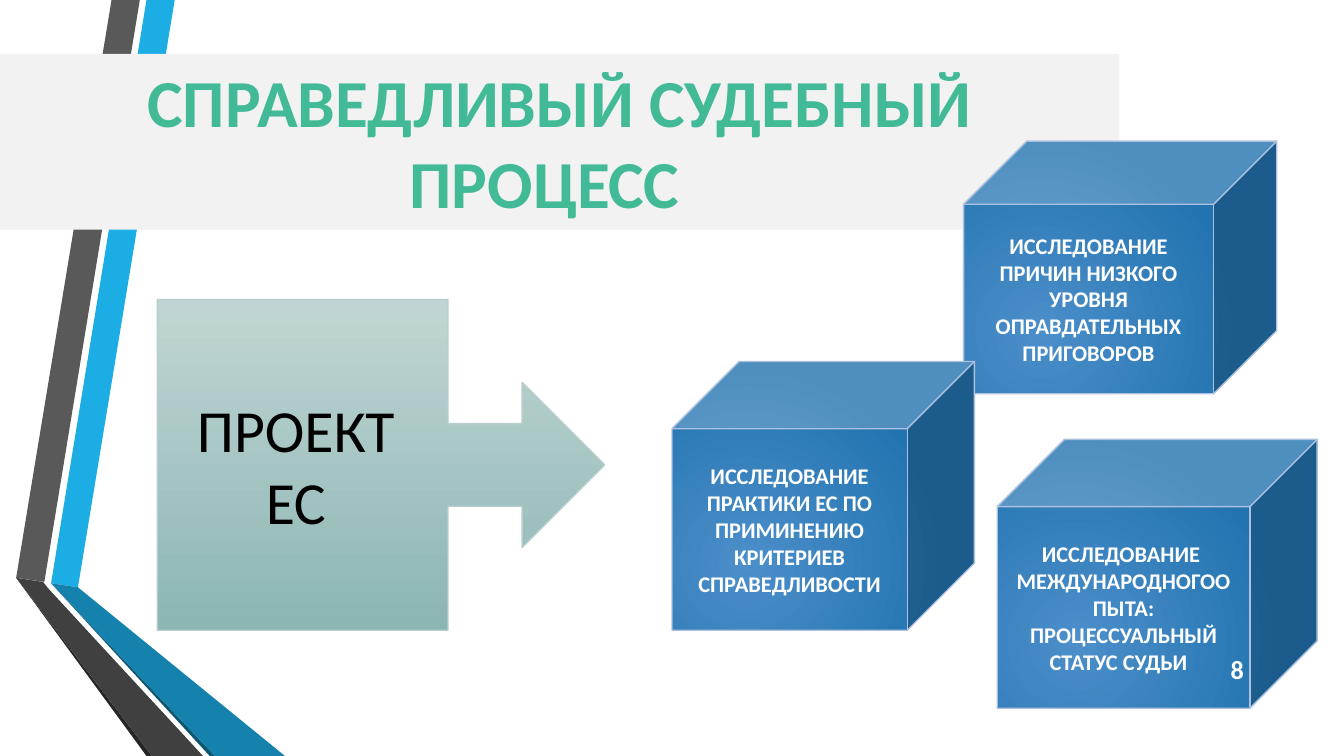
from dataclasses import dataclass

import pptx
import pptx.dml.color
import pptx.enum.shapes
import pptx.enum.text
import pptx.oxml
import pptx.oxml.ns
import pptx.util
from pptx.util import Inches

SHAPE = pptx.enum.shapes.MSO_SHAPE
WIDTH = 10
HEIGHT = WIDTH * 9 / 16


@dataclass(frozen=True)
class Theme:
    font: str = "Calibri"
    title_size: int = 36
    project_size: int = 32
    cube_size: int = 12
    number_size: int = 14
    line_width: float = 0.75
    title: str = "42BA97"
    band: str = "F2F2F2"
    black: str = "000000"
    white: str = "FFFFFF"
    callout_fill: tuple = ("C0D5D3", "8CB6B3")
    callout_line: str = "B7CECD"
    cube_fill: tuple = ("4B8ECA", "2274B0")
    cube_line: str = "ADC1DF"
    blue: str = "1CADE4"
    blue_shade: str = "1482AC"
    blue_edge: str = "0E5772"
    gray: str = "595959"
    gray_shade: str = "404040"
    gray_edge: str = "262626"


THEME = Theme()

RIBBONS = [
    (THEME.blue, [(0.38, 4.34), (0.58, 4.37), (1.3, 0), (1.09, 0)]),
    (THEME.gray, [(1.04, 0), (0.83, 0), (0.12, 4.3), (0.33, 4.33)]),
    (THEME.gray_edge, [(0.12, 4.3), (1.09, HEIGHT), (1.13, HEIGHT)]),
    (THEME.blue_edge, [(0.38, 4.34), (1.56, HEIGHT), (1.6, HEIGHT)]),
    (THEME.blue_shade, [(0.38, 4.34), (1.6, HEIGHT), (2.12, HEIGHT), (0.58, 4.37)]),
    (THEME.gray_shade, [(1.51, HEIGHT), (0.36, 4.38), (0.32, 4.33), (0.12, 4.3), (1.13, HEIGHT)]),
]

CUBES = [
    ((7.17, 1.05, 2.33, 1.88), "ИССЛЕДОВАНИЕ ПРИЧИН НИЗКОГО УРОВНЯ ОПРАВДАТЕЛЬНЫХ ПРИГОВОРОВ"),
    ((5, 2.69, 2.25, 2), "ИССЛЕДОВАНИЕ ПРАКТИКИ ЕС ПО ПРИМИНЕНИЮ КРИТЕРИЕВ СПРАВЕДЛИВОСТИ"),
    ((7.42, 3.27, 2.38, 2), "ИССЛЕДОВАНИЕ  МЕЖДУНАРОДНОГООПЫТА: ПРОЦЕССУАЛЬНЫЙ СТАТУС СУДЬИ  "),
]


def rgb(value):
    return pptx.dml.color.RGBColor.from_string(value)


def write_text(box, lines, size, color, bold=True):
    frame = box.text_frame
    frame.word_wrap = True
    frame.vertical_anchor = pptx.enum.text.MSO_ANCHOR.MIDDLE
    for index, line in enumerate(lines):
        para = frame.paragraphs[0] if index == 0 else frame.add_paragraph()
        para.alignment = pptx.enum.text.PP_ALIGN.CENTER
        span = para.add_run()
        span.text = line
        span.font.name = THEME.font
        span.font.size = pptx.util.Pt(size)
        span.font.bold = bold
        span.font.color.rgb = rgb(color)


def fill_solid(shape, color):
    shape.shadow.inherit = False
    shape.fill.solid()
    shape.fill.fore_color.rgb = rgb(color)
    shape.line.fill.background()


def fill_gradient(shape, colors, line_color):
    """Fill from top to bottom and draw a thin outline."""
    shape.shadow.inherit = False
    shape.fill.gradient()
    shape.fill.gradient_angle = 270
    for stop, position, color in zip(shape.fill.gradient_stops, (0, 1), colors):
        stop.position = position
        stop.color.rgb = rgb(color)
    shape.line.color.rgb = rgb(line_color)
    shape.line.width = pptx.util.Pt(THEME.line_width)


def make_radial(shape):
    """Turn the linear gradient of a shape into a circular one."""
    qn = pptx.oxml.ns.qn
    gradient = shape._element.spPr.find(qn("a:gradFill"))
    circle = pptx.oxml.parse_xml(
        f'<a:path {pptx.oxml.ns.nsdecls("a")} path="circle">'
        '<a:fillToRect l="50000" t="100000" r="100000" b="50000"/></a:path>'
    )
    gradient.replace(gradient.find(qn("a:lin")), circle)


def add_preset(page, kind, place):
    return page.shapes.add_shape(kind, *map(Inches, place))


def add_ribbon(page, color, points):
    corners = [(Inches(x), Inches(y)) for x, y in points]
    builder = page.shapes.build_freeform(*corners[0])
    builder.add_line_segments(corners[1:], close=True)
    fill_solid(builder.convert_to_shape(), color)


def add_title(page):
    band = add_preset(page, SHAPE.RECTANGLE, (0, 0.4, 8.33, 1.31))
    fill_solid(band, THEME.band)
    write_text(band, ["СПРАВЕДЛИВЫЙ СУДЕБНЫЙ ПРОЦЕСС  "], THEME.title_size, THEME.title)
    band.text_frame.vertical_anchor = pptx.enum.text.MSO_ANCHOR.TOP
    band.text_frame.auto_size = pptx.enum.text.MSO_AUTO_SIZE.SHAPE_TO_FIT_TEXT


def add_project(page):
    callout = add_preset(page, SHAPE.RIGHT_ARROW_CALLOUT, (1.17, 2.23, 3.33, 2.46))
    fill_gradient(callout, THEME.callout_fill, THEME.callout_line)
    write_text(callout, ["ПРОЕКТ ", "ЕС "], THEME.project_size, THEME.black, bold=False)


def add_cube(page, place, caption):
    cube = add_preset(page, SHAPE.CUBE, place)
    fill_gradient(cube, THEME.cube_fill, THEME.cube_line)
    make_radial(cube)
    write_text(cube, [caption], THEME.cube_size, THEME.white)


def add_page_number(page):
    box = page.shapes.add_textbox(*map(Inches, (8.98, 4.83, 0.45, 0.3)))
    write_text(box, ["8"], THEME.number_size, THEME.white)


def main():
    deck = pptx.Presentation()
    deck.slide_width, deck.slide_height = Inches(WIDTH), Inches(HEIGHT)
    page = deck.slides.add_slide(deck.slide_layouts[6])
    for color, points in RIBBONS:
        add_ribbon(page, color, points)
    add_title(page)
    add_project(page)
    for place, caption in CUBES:
        add_cube(page, place, caption)
    add_page_number(page)
    deck.save("out.pptx")


if __name__ == "__main__":
    main()
